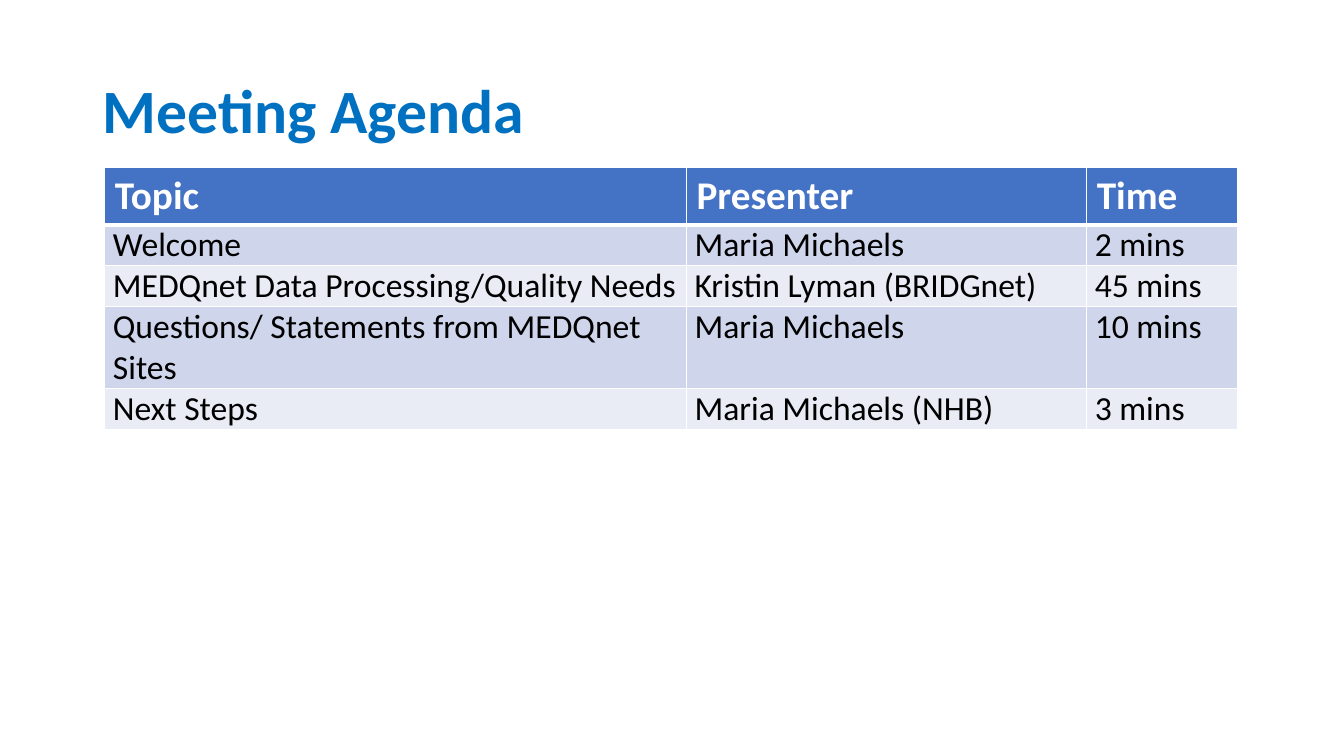
"""Build the meeting agenda slide."""
from dataclasses import dataclass
from typing import NamedTuple

from lxml.etree import SubElement
from pptx import Presentation
from pptx.dml.color import RGBColor
from pptx.enum.text import MSO_ANCHOR
from pptx.oxml.ns import qn
from pptx.slide import Slide
from pptx.table import _Cell
from pptx.text.text import _Paragraph
from pptx.util import Inches, Length, Pt

SLIDE_WIDTH, SLIDE_HEIGHT = Inches(13.33), Inches(7.5)


@dataclass(frozen=True)
class Theme:
    font: str = "Calibri"
    title: str = "0070C0"
    header: str = "4472C4"
    bands: tuple[str, str] = ("CFD5EA", "E9EBF5")
    light: str = "FFFFFF"
    body: str = "000000"
    title_size: int = 44
    header_size: int = 28
    body_size: int = 24
    border: int = 1
    header_rule: int = 3


class AgendaItem(NamedTuple):
    topic: str
    presenter: str
    time: str


class Area(NamedTuple):
    """Hold a left, top, width and height in percent of the slide."""
    left: float
    top: float
    width: float
    height: float


THEME = Theme()
TITLE_AREA = Area(6.9, 5.33, 86.27, 19.33)
TABLE_LEFT, TABLE_TOP = 7.8, 22.13
COLUMN_SHARES = (43.28, 29.78, 11.25)
HEADER_SHARE, LINE_SHARE = 7.6, 5.43
LINES_PER_ITEM = (1, 1, 2, 1)
HEADER = AgendaItem("Topic", "Presenter", "Time")
AGENDA = (
    AgendaItem("Welcome", "Maria Michaels", "2 mins"),
    AgendaItem("MEDQnet Data Processing/Quality Needs", "Kristin Lyman (BRIDGnet)", "45 mins"),
    AgendaItem("Questions/ Statements from MEDQnet Sites", "Maria Michaels", "10 mins"),
    AgendaItem("Next Steps", "Maria Michaels (NHB)", "3 mins"),
)


def across(percent: float) -> Length:
    """Return a share of the slide width."""
    return Length(round(SLIDE_WIDTH * percent / 100))


def down(percent: float) -> Length:
    """Return a share of the slide height."""
    return Length(round(SLIDE_HEIGHT * percent / 100))


def add_words(paragraph: _Paragraph, words: str, size: int, color: str, bold: bool) -> None:
    """Add one styled run."""
    run = paragraph.add_run()
    run.text = words
    run.font.name = THEME.font
    run.font.size = Pt(size)
    run.font.bold = bold
    run.font.color.rgb = RGBColor.from_string(color)


def add_title(slide: Slide, words: str) -> None:
    """Add the slide heading."""
    area = TITLE_AREA
    heading = slide.shapes.add_textbox(
        across(area.left), down(area.top), across(area.width), down(area.height))
    frame = heading.text_frame
    frame.word_wrap = True
    frame.vertical_anchor = MSO_ANCHOR.MIDDLE
    frame.paragraphs[0].line_spacing = 0.9
    add_words(frame.paragraphs[0], words, THEME.title_size, THEME.title, True)


def add_borders(cell: _Cell, top: int, bottom: int) -> None:
    """Draw the four cell borders."""
    properties = cell._tc.get_or_add_tcPr()
    widths = {"a:lnL": THEME.border, "a:lnR": THEME.border, "a:lnT": top, "a:lnB": bottom}
    for side, width in widths.items():
        line = SubElement(properties, qn(side), w=str(Pt(width)))
        SubElement(SubElement(line, qn("a:solidFill")), qn("a:srgbClr"), val=THEME.light)


def fill_cell(cell: _Cell, words: str, row: int) -> None:
    """Style a cell by its row and write its words."""
    is_header = row == 0
    add_borders(cell, THEME.header_rule if row == 1 else THEME.border,
                THEME.header_rule if is_header else THEME.border)
    cell.fill.solid()
    band = THEME.header if is_header else THEME.bands[(row - 1) % 2]
    cell.fill.fore_color.rgb = RGBColor.from_string(band)
    paragraph = cell.text_frame.paragraphs[0]
    if is_header:
        add_words(paragraph, words, THEME.header_size, THEME.light, True)
        return
    cell.margin_left = cell.margin_right = Inches(0.08)
    cell.margin_top = cell.margin_bottom = 0
    paragraph.space_after = Pt(6)
    add_words(paragraph, words, THEME.body_size, THEME.body, False)


def add_agenda(slide: Slide) -> None:
    """Add the agenda table."""
    row_shares = (HEADER_SHARE, *(LINE_SHARE * lines for lines in LINES_PER_ITEM))
    agenda = slide.shapes.add_table(
        len(row_shares), len(COLUMN_SHARES), across(TABLE_LEFT), down(TABLE_TOP),
        across(sum(COLUMN_SHARES)), down(sum(row_shares))).table
    for column, share in zip(agenda.columns, COLUMN_SHARES):
        column.width = across(share)
    for row, (item, share) in enumerate(zip((HEADER, *AGENDA), row_shares)):
        agenda.rows[row].height = down(share)
        for column, words in enumerate(item):
            fill_cell(agenda.cell(row, column), words, row)


def main() -> None:
    """Build and save the presentation."""
    deck = Presentation()
    deck.slide_width, deck.slide_height = SLIDE_WIDTH, SLIDE_HEIGHT
    slide = deck.slides.add_slide(deck.slide_layouts[6])
    add_title(slide, "Meeting Agenda")
    add_agenda(slide)
    deck.save("out.pptx")


if __name__ == "__main__":
    main()
